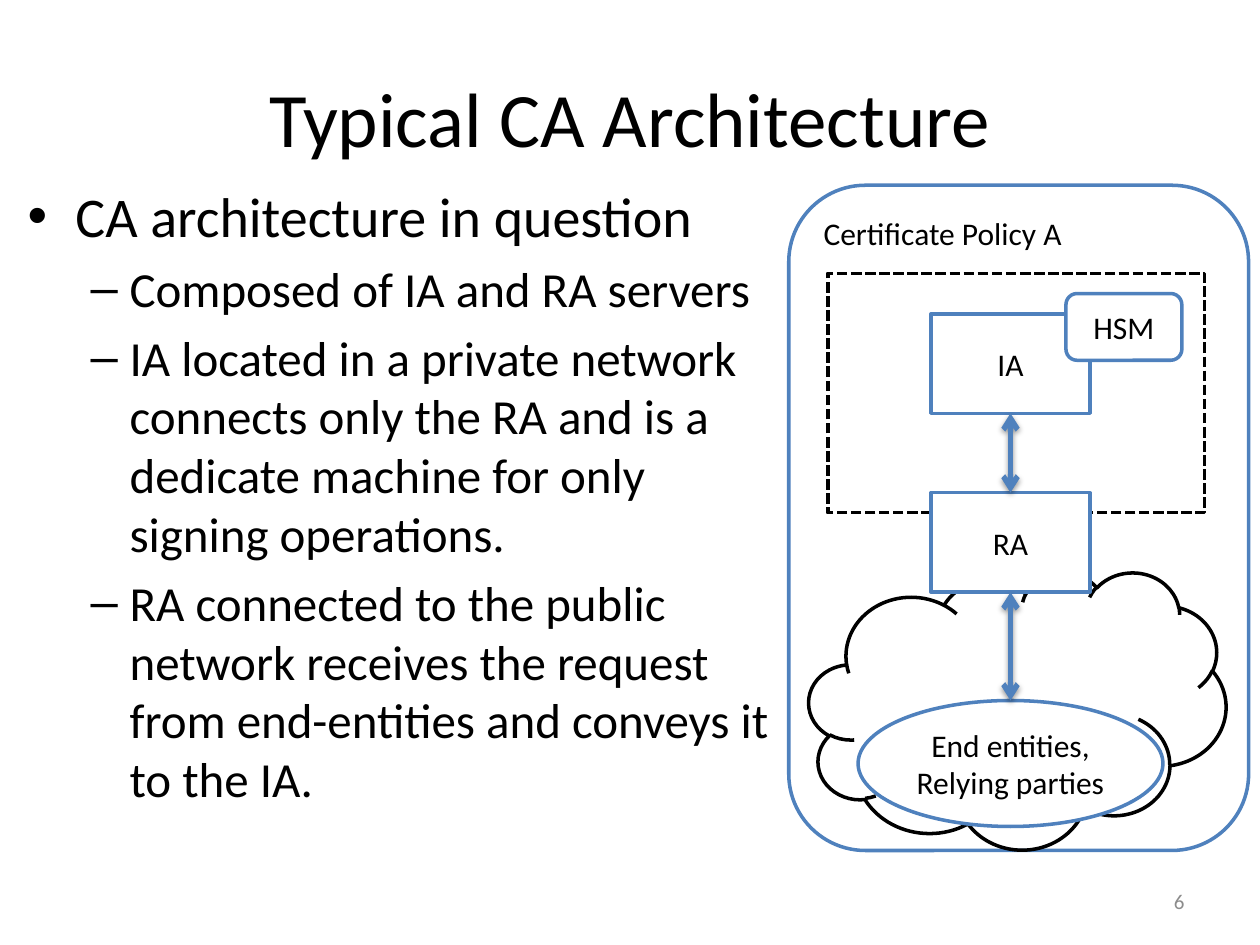
import pptx
import pptx.util
import pptx.dml.color
import pptx.enum.dml
import pptx.enum.shapes
import pptx.enum.text
import lxml.etree

Inches, Pt = pptx.util.Inches, pptx.util.Pt
RGBColor = pptx.dml.color.RGBColor
SHAPE = pptx.enum.shapes.MSO_SHAPE
ALIGN = pptx.enum.text.PP_ALIGN
ANCHOR = pptx.enum.text.MSO_ANCHOR
qn = pptx.oxml.ns.qn

BLACK = RGBColor(0, 0, 0)
WHITE = RGBColor(255, 255, 255)
BLUE = RGBColor(0x4F, 0x81, 0xBD)
GRAY = RGBColor(0x8C, 0x8C, 0x8C)


def add_run(para, text, size, color=BLACK):
    run = para.add_run()
    run.text = text
    run.font.name = "Calibri"
    run.font.size = Pt(size)
    run.font.color.rgb = color


def add_text(slide, box, text, size, align, color=BLACK):
    frame = slide.shapes.add_textbox(*map(Inches, box)).text_frame
    frame.word_wrap = True
    frame.vertical_anchor = ANCHOR.MIDDLE
    frame.paragraphs[0].alignment = align
    add_run(frame.paragraphs[0], text, size, color)


def add_node(slide, kind, box, text="", line=BLUE, fill=WHITE,
             align=ALIGN.CENTER, anchor=ANCHOR.MIDDLE):
    shape = slide.shapes.add_shape(kind, *map(Inches, box))
    shape.shadow.inherit = False
    shape.line.color.rgb = line
    shape.line.width = Pt(2)
    if fill is None:
        shape.fill.background()
    else:
        shape.fill.solid()
        shape.fill.fore_color.rgb = fill
    if text:
        frame = shape.text_frame
        frame.word_wrap = True
        frame.vertical_anchor = anchor
        frame.paragraphs[0].alignment = align
        add_run(frame.paragraphs[0], text, 18)
    return shape


def add_arrow(slide, x, top, end):
    link = slide.shapes.add_connector(
        pptx.enum.shapes.MSO_CONNECTOR.STRAIGHT,
        Inches(x), Inches(top), Inches(x), Inches(end))
    link.line.color.rgb = BLUE
    link.line.width = Pt(3)
    # Arrowheads at both ends
    for tag in ("a:headEnd", "a:tailEnd"):
        lxml.etree.SubElement(link.line._get_or_add_ln(), qn(tag), type="arrow")
    # Soft shadow below the line
    effect = lxml.etree.SubElement(link._element.spPr, qn("a:effectLst"))
    shade = lxml.etree.SubElement(
        effect, qn("a:outerShdw"), blurRad=str(Pt(3.1)), dist=str(Pt(1.6)),
        dir="5400000", rotWithShape="0")
    color = lxml.etree.SubElement(shade, qn("a:srgbClr"), val=str(BLACK))
    lxml.etree.SubElement(color, qn("a:alpha"), val="38000")


def add_list(slide, box, items):
    frame = slide.shapes.add_textbox(*map(Inches, box)).text_frame
    frame.word_wrap = True
    # Per level: bullet, size, left margin, hanging indent
    styles = (("•", 32, 0.38, 0.38), ("–", 28, 0.81, 0.31))
    for i, (level, text) in enumerate(items):
        mark, size, left, hang = styles[level]
        para = frame.add_paragraph() if i else frame.paragraphs[0]
        para.level = level
        props = para._p.get_or_add_pPr()
        props.set("marL", str(Inches(left)))
        props.set("indent", str(-Inches(hang)))
        lxml.etree.SubElement(props, qn("a:buFont"), typeface="Arial")
        lxml.etree.SubElement(props, qn("a:buChar"), char=mark)
        if i:
            para.space_before = Pt(size * 0.2)
        add_run(para, text, size)


def add_policy(slide, left, top, width, height):
    # Policy frame
    add_node(slide, SHAPE.ROUNDED_RECTANGLE, (left, top, width, height),
             "Certificate Policy A", align=ALIGN.LEFT, anchor=ANCHOR.TOP)

    # Private and public networks
    private = add_node(slide, SHAPE.RECTANGLE,
                       (left + 0.31, top + 0.7, 2.99, 1.9),
                       line=BLACK, fill=None)
    private.line.dash_style = pptx.enum.dml.MSO_LINE.SQUARE_DOT
    # SQUARE_DOT is sysDot in the file; the frame needs sysDash
    private.line._get_or_add_ln().find(qn("a:prstDash")).set("val", "sysDash")
    add_node(slide, SHAPE.CLOUD, (left + 0.16, top + 3.07, 3.31, 2.2),
             line=BLACK, fill=None)

    # Servers and users
    wide, high = 1.26, 0.79
    mid = left + 1.76
    ia_top, ra_top, user_top = top + 1.02, top + 2.44, top + 4.09
    for name, y in (("IA", ia_top), ("RA", ra_top)):
        add_node(slide, SHAPE.RECTANGLE, (mid - wide / 2, y, wide, high), name)
    add_node(slide, SHAPE.OVAL, (mid - 1.21, user_top, 2.42, 1),
             "End entities, Relying parties")

    # Links between them
    add_arrow(slide, mid, ia_top + high, ra_top)
    add_arrow(slide, mid, ra_top + high, user_top)

    # Key module on the corner of the IA
    add_node(slide, SHAPE.ROUNDED_RECTANGLE,
             (left + 2.2, top + 0.86, 0.92, 0.53), "HSM")


def main():
    deck = pptx.Presentation()
    deck.slide_width, deck.slide_height = Inches(10), Inches(7.5)
    slide = deck.slides.add_slide(deck.slide_layouts[6])
    add_text(slide, (0.5, 0.3, 9, 1.25), "Typical CA Architecture", 44,
             ALIGN.CENTER)
    add_list(slide, (0.12, 1.39, 6.12, 5.17), (
        (0, "CA architecture in question"),
        (1, "Composed of IA and RA servers"),
        (1, "IA located in a private network connects only the RA and is a "
            "dedicate machine for only signing operations."),
        (1, "RA connected to the public network receives the request from "
            "end-entities and conveys it to the IA."),
    ))
    add_text(slide, (7.17, 6.95, 2.33, 0.4), "6", 12, ALIGN.RIGHT, GRAY)
    add_policy(slide, 6.26, 1.47, 3.65, 5.28)
    deck.save("out.pptx")


if __name__ == "__main__":
    main()
